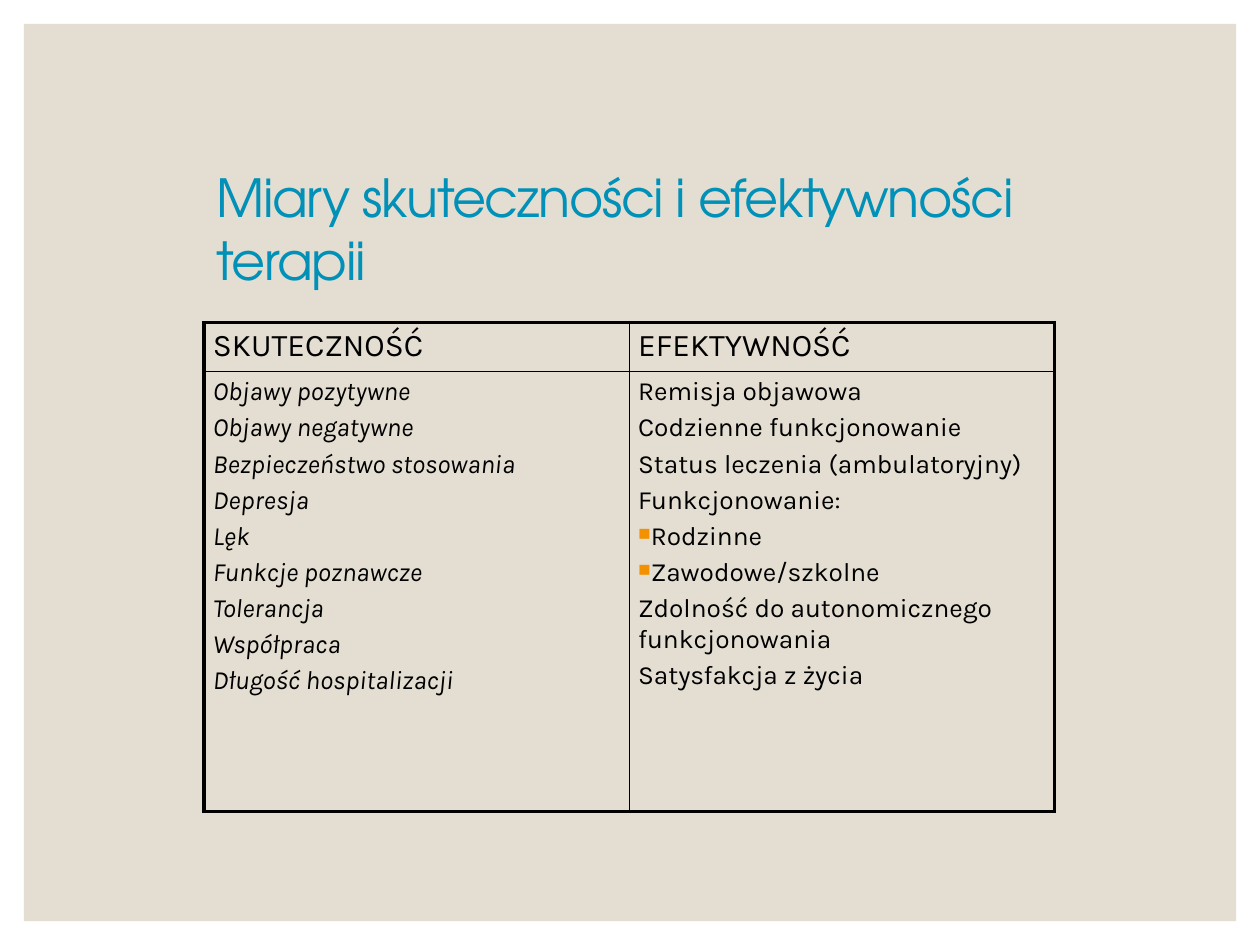
from dataclasses import dataclass

from lxml.etree import SubElement
from pptx import Presentation
from pptx.dml.color import RGBColor
from pptx.enum.shapes import MSO_SHAPE
from pptx.enum.text import MSO_ANCHOR
from pptx.oxml.ns import qn
from pptx.util import Inches, Pt


@dataclass(frozen=True)
class Theme:
    panel: str = "E3DED1"
    title: str = "0090B8"
    ink: str = "000000"
    bullet: str = "F49100"
    title_font: str = "TeX Gyre Adventor"
    body_font: str = "Karla"
    title_size: int = 30
    head_size: int = 18
    body_size: int = 15
    outer_line: float = 2.25
    inner_line: float = 1


THEME = Theme()
WIDTH, HEIGHT = Inches(10), Inches(7.5)
MARGIN = Inches(0.19)
LEFT, CONTENT_WIDTH = Inches(1.62), Inches(6.75)
ROW_HEIGHTS = (0.39, 3.49)
BULLET = "■"
HEADS = ("SKUTECZNOŚĆ", "EFEKTYWNOŚĆ")
MEASURES = (
    ("Objawy pozytywne", "Objawy negatywne", "Bezpieczeństwo stosowania",
     "Depresja", "Lęk", "Funkcje poznawcze", "Tolerancja", "Współpraca",
     "Długość hospitalizacji"),
    ("Remisja objawowa", "Codzienne funkcjonowanie",
     "Status leczenia (ambulatoryjny)", "Funkcjonowanie:",
     BULLET + "Rodzinne", BULLET + "Zawodowe/szkolne",
     "Zdolność do autonomicznego funkcjonowania", "Satysfakcja z życia"),
)


def add_bullet(p):
    pPr = p._p.get_or_add_pPr()
    color = SubElement(pPr, qn("a:buClr"))
    SubElement(color, qn("a:srgbClr"), val=THEME.bullet)
    SubElement(pPr, qn("a:buSzPct"), val="65000")
    SubElement(pPr, qn("a:buChar"), char=BULLET)


def write(tf, lines, size, font=THEME.body_font, color=THEME.ink,
          italic=False, spacing=0):
    tf.word_wrap = True
    for i, line in enumerate(lines):
        p = tf.paragraphs[0] if i == 0 else tf.add_paragraph()
        p.space_before = Pt(0.2 * size if i else 0)
        if line.startswith(BULLET):
            add_bullet(p)
        r = p.add_run()
        r.text = line.removeprefix(BULLET)
        r.font.name = font
        r.font.size = Pt(size)
        r.font.italic = italic
        r.font.color.rgb = RGBColor.from_string(color)
        if spacing:
            r._r.get_or_add_rPr().set("spc", str(round(spacing * 100)))


def set_borders(cell, row, col):
    tcPr = cell._tc.get_or_add_tcPr()
    outer = {"L": col == 0, "R": col == 1, "T": row == 0, "B": row == 1}
    for side, is_outer in outer.items():
        width = THEME.outer_line if is_outer else THEME.inner_line
        ln = SubElement(tcPr, qn(f"a:ln{side}"), w=str(Pt(width)))
        fill = SubElement(ln, qn("a:solidFill"))
        SubElement(fill, qn("a:srgbClr"), val=THEME.ink)


def add_panel(s):
    sp = s.shapes.add_shape(MSO_SHAPE.RECTANGLE, MARGIN, MARGIN,
                            WIDTH - 2 * MARGIN, HEIGHT - 2 * MARGIN)
    sp.shadow.inherit = False
    sp.fill.solid()
    sp.fill.fore_color.rgb = RGBColor.from_string(THEME.panel)
    sp.line.fill.background()


def add_title(s, text):
    sp = s.shapes.add_textbox(LEFT, Inches(1.25), CONTENT_WIDTH, Inches(1.12))
    tf = sp.text_frame
    tf.vertical_anchor = MSO_ANCHOR.MIDDLE
    write(tf, [text], THEME.title_size, font=THEME.title_font,
          color=THEME.title, spacing=-0.8)


def add_measures(s):
    frame = s.shapes.add_table(2, 2, LEFT, Inches(2.56), CONTENT_WIDTH,
                               Inches(sum(ROW_HEIGHTS)))
    table = frame.table
    table.first_row = table.horz_banding = False
    for row, height in zip(table.rows, ROW_HEIGHTS):
        row.height = Inches(height)
    for col in range(2):
        for row, lines in enumerate(([HEADS[col]], MEASURES[col])):
            cell = table.cell(row, col)
            cell.margin_left = cell.margin_right = Inches(0.07)
            cell.margin_top = cell.margin_bottom = Inches(0.04)
            set_borders(cell, row, col)
            cell.fill.background()
            write(cell.text_frame, lines,
                  THEME.body_size if row else THEME.head_size,
                  italic=row == 1 and col == 0)


def main():
    prs = Presentation()
    prs.slide_width, prs.slide_height = WIDTH, HEIGHT
    s = prs.slides.add_slide(prs.slide_layouts[6])
    add_panel(s)
    add_title(s, "Miary skuteczności i efektywności terapii")
    add_measures(s)
    prs.save("out.pptx")


if __name__ == "__main__":
    main()
